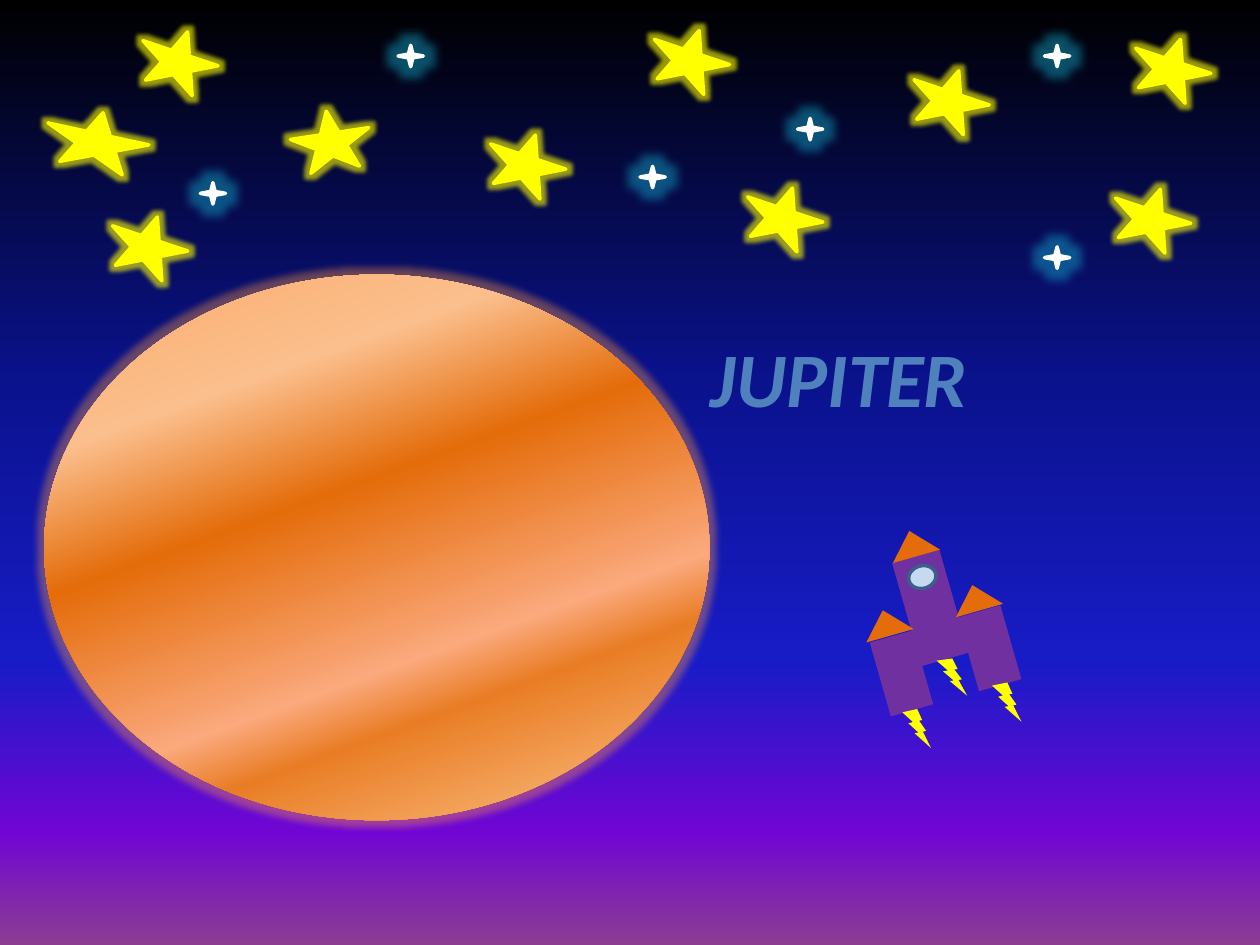
import lxml.etree
import pptx
import pptx.dml.color
import pptx.enum.shapes
import pptx.enum.text
import pptx.oxml.ns
import pptx.util

Inches = pptx.util.Inches
Pt = pptx.util.Pt
RGBColor = pptx.dml.color.RGBColor
SHAPE = pptx.enum.shapes.MSO_SHAPE
qn = pptx.oxml.ns.qn

YELLOW = RGBColor(0xFF, 0xFF, 0x00)
WHITE = RGBColor(0xFF, 0xFF, 0xFF)
PURPLE = RGBColor(0x70, 0x30, 0xA0)
ORANGE = RGBColor(0xE4, 0x6C, 0x0A)
WINDOW_BLUE = RGBColor(0xC6, 0xD9, 0xF1)
WINDOW_RIM = RGBColor(0x3A, 0x5F, 0x8C)
TITLE_BLUE = RGBColor(0x4F, 0x81, 0xBD)
PLANET_GLOW = RGBColor(0xF7, 0x96, 0x46)
SPARKLE_GLOW = RGBColor(0x15, 0xB0, 0xD0)

# Gradient stops: position in percent, colour
SKY = [(0, RGBColor(0x00, 0x00, 0x00)), (40, RGBColor(0x0A, 0x12, 0x8C)),
       (70, RGBColor(0x18, 0x1C, 0xC7)), (88, RGBColor(0x70, 0x05, 0xD4)),
       (100, RGBColor(0x8C, 0x3D, 0x91))]
PLANET = [(0, RGBColor(0xFB, 0xEA, 0xC7)), (12, RGBColor(0xFB, 0xB6, 0x7D)),
          (23, RGBColor(0xFB, 0xBF, 0x8D)), (41, ORANGE),
          (66, RGBColor(0xFB, 0xA9, 0x7D)), (74, RGBColor(0xE9, 0x7D, 0x25)),
          (96, RGBColor(0xFA, 0xBA, 0x7D))]

ROCKET_TILT = 344.1
STAR_TILT = 18.5
STAR_SIZE = (0.63, 0.47)
SPARKLE_SIZE = (0.2, 0.17)
STAR_PLACES = [(7.22, 0.55), (5.16, 0.23), (8.98, 0.3), (0.86, 1.71),
               (8.82, 1.49), (3.86, 1.06), (1.1, 0.24), (5.9, 1.48)]
SPARKLE_PLACES = [(6.33, 0.94), (1.59, 1.45), (8.29, 0.36),
                  (3.16, 0.36), (8.29, 1.96), (5.08, 1.32)]


def set_gradient(fill, stops, angle):
    """Fill with the stops; the angle runs clockwise from the left."""
    fill.gradient()
    fill.gradient_angle = 360 - angle
    stop_list = fill.gradient_stops[0]._gs.getparent()
    for old_stop in list(stop_list):
        stop_list.remove(old_stop)
    for percent, color in stops:
        stop = lxml.etree.SubElement(stop_list, qn("a:gs"), pos=str(percent * 1000))
        lxml.etree.SubElement(stop, qn("a:srgbClr"), val=str(color))


def add_glow(shape, color, radius, opacity):
    effects = shape._element.spPr.find(qn("a:effectLst"))
    glow = lxml.etree.SubElement(effects, qn("a:glow"), rad=str(Pt(radius)))
    tint = lxml.etree.SubElement(glow, qn("a:srgbClr"), val=str(color))
    lxml.etree.SubElement(tint, qn("a:alpha"), val=str(opacity * 1000))


def add_figure(shapes, kind, place, size, color=None, tilt=0, outline=None):
    figure = shapes.add_shape(kind, *map(Inches, place + size))
    figure.rotation = tilt
    figure.shadow.inherit = False
    if color is not None:
        figure.fill.solid()
        figure.fill.fore_color.rgb = color
    if outline is None:
        figure.line.fill.background()
    else:
        figure.line.color.rgb = outline
        figure.line.width = Pt(2)
    return figure


def add_star(shapes, place, size=STAR_SIZE, tilt=STAR_TILT, mirrored=True):
    star = add_figure(shapes, SHAPE.STAR_5_POINT, place, size, YELLOW, tilt, YELLOW)
    if mirrored:
        star._element.spPr.find(qn("a:xfrm")).set("flipH", "1")
    add_glow(star, YELLOW, 5, 60)


def add_sparkle(shapes, place):
    sparkle = add_figure(shapes, SHAPE.STAR_4_POINT, place, SPARKLE_SIZE, WHITE, 0, WHITE)
    add_glow(sparkle, SPARKLE_GLOW, 11, 45)


def add_planet(shapes):
    planet = add_figure(shapes, SHAPE.OVAL, (0.35, 2.18), (5.28, 4.33))
    set_gradient(planet.fill, PLANET, 70)
    add_glow(planet, PLANET_GLOW, 8, 40)


def add_rocket(shapes):
    # Left booster, main body, right booster
    for place, size in [((6.98, 5.04), (0.35, 0.61)),
                        ((7.19, 4.4), (0.39, 0.85)),
                        ((7.68, 4.84), (0.35, 0.61))]:
        add_figure(shapes, SHAPE.RECTANGLE, place, size, PURPLE, ROCKET_TILT)
    # Nose cones
    for place in [(6.84, 4.84), (7.55, 4.64), (7.05, 4.21)]:
        add_figure(shapes, SHAPE.ISOSCELES_TRIANGLE, place, (0.39, 0.21),
                   ORANGE, ROCKET_TILT)
    # Window
    add_figure(shapes, SHAPE.OVAL, (7.21, 4.49), (0.22, 0.18),
               WINDOW_BLUE, ROCKET_TILT, WINDOW_RIM)
    # Flames
    for place, size, tilt in [((7.14, 5.63), (0.28, 0.28), 11.9),
                              ((7.41, 5.23), (0.3, 0.26), 13.4),
                              ((7.85, 5.42), (0.29, 0.28), 12.5)]:
        add_figure(shapes, SHAPE.LIGHTNING_BOLT, place, size, YELLOW, tilt)


def add_starry_sky(shapes):
    add_star(shapes, (2.31, 0.88), tilt=351.4)
    for place in STAR_PLACES:
        add_star(shapes, place)
    for place in SPARKLE_PLACES:
        add_sparkle(shapes, place)


def set_title(title):
    title.left, title.top, title.width, title.height = map(
        Inches, (5.27, 2.57, 2.78, 0.84))
    title.text_frame.text = "JUPITER"
    paragraph = title.text_frame.paragraphs[0]
    paragraph.alignment = pptx.enum.text.PP_ALIGN.CENTER
    font = paragraph.runs[0].font
    font.name = "Calibri"
    font.size = Pt(44)
    font.bold = font.italic = True
    font.color.rgb = TITLE_BLUE


def main():
    deck = pptx.Presentation()
    deck.slide_width, deck.slide_height = Inches(10), Inches(7.5)
    slide = deck.slides.add_slide(deck.slide_layouts[5])  # Title Only
    set_gradient(slide.background.fill, SKY, 90)

    add_planet(slide.shapes)
    add_rocket(slide.shapes.add_group_shape().shapes)
    add_starry_sky(slide.shapes.add_group_shape().shapes)
    # Wide star at the far left
    add_star(slide.shapes, (0.36, 0.89), (0.82, 0.45), 12.3, mirrored=False)
    set_title(slide.shapes.title)

    deck.save("out.pptx")


if __name__ == "__main__":
    main()
